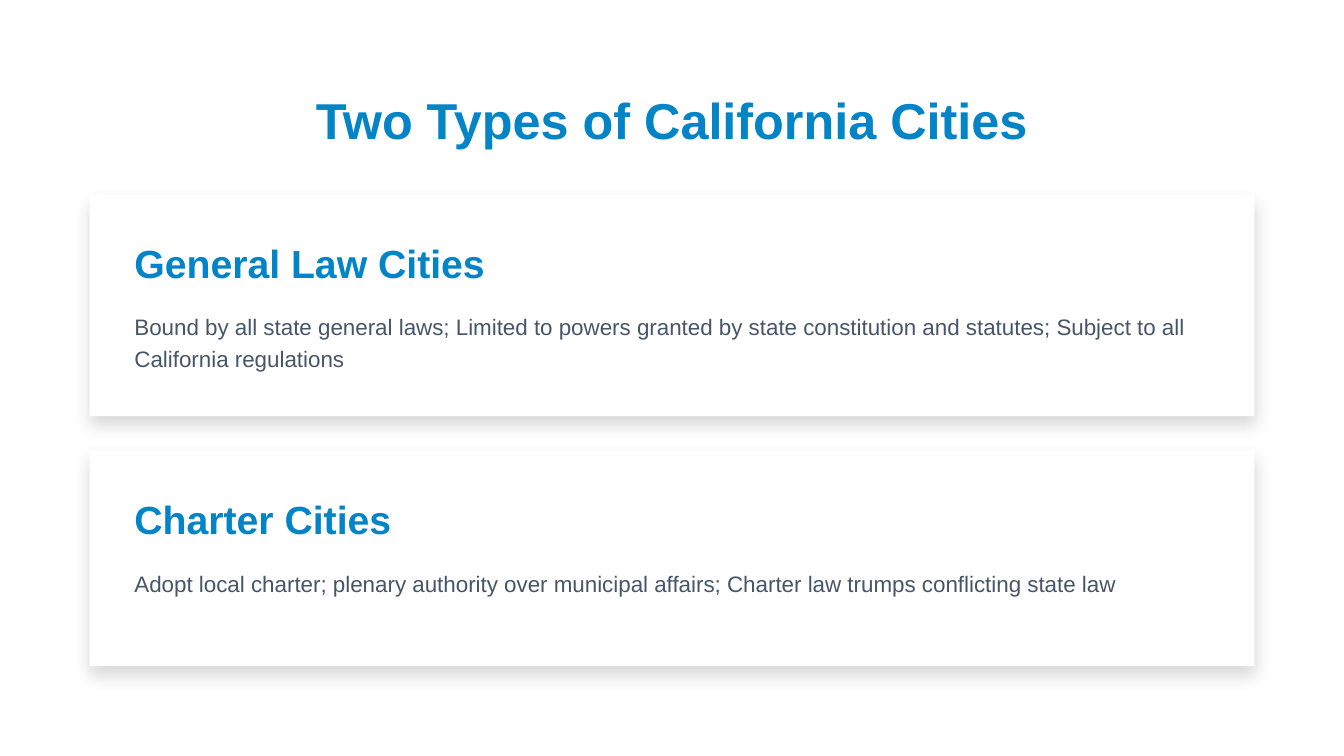
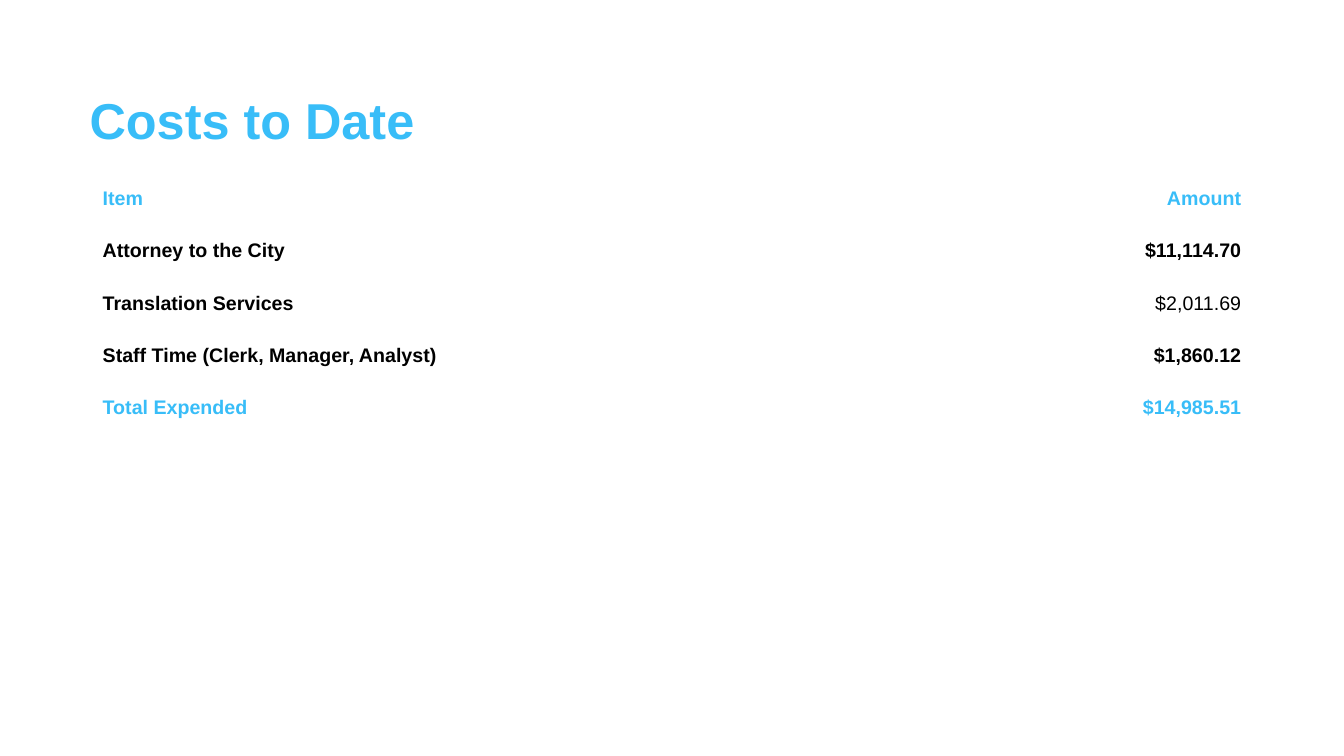
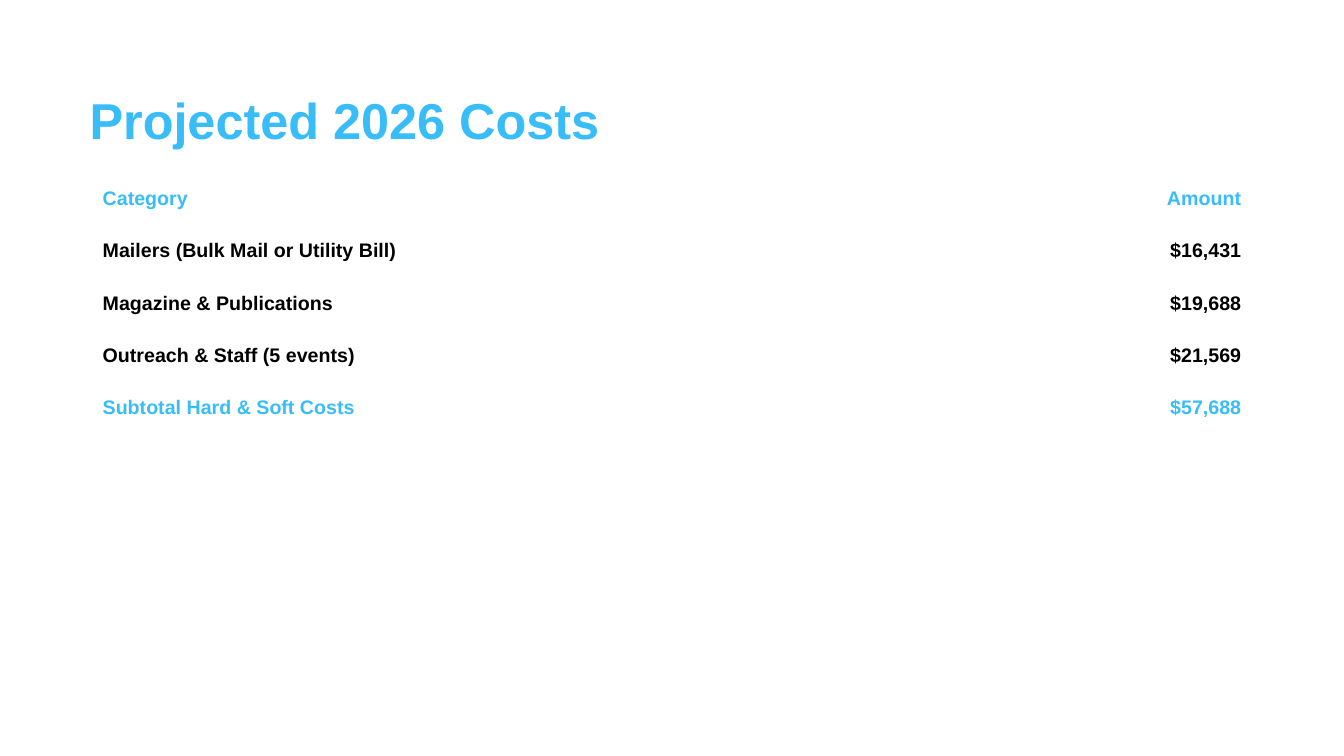
from dataclasses import dataclass

from lxml.etree import SubElement
from pptx import Presentation
from pptx.dml.color import RGBColor
from pptx.enum.shapes import MSO_SHAPE as Shape
from pptx.enum.text import MSO_ANCHOR as Anchor, MSO_AUTO_SIZE as AutoSize, PP_ALIGN as Align
from pptx.oxml.ns import qn
from pptx.util import Inches, Pt

# Shared look
WHITE = RGBColor(0xFF, 0xFF, 0xFF)
BLACK = RGBColor(0x00, 0x00, 0x00)
SLATE = RGBColor(0x47, 0x55, 0x69)
DEEP_BLUE = RGBColor(0x02, 0x84, 0xC7)
SKY_BLUE = RGBColor(0x38, 0xBD, 0xF8)
FONT = "Arial"

# Grid: fifteen columns, one of them as margin on each side
SLIDE_WIDTH, SLIDE_HEIGHT = Inches(13.33), Inches(7.5)
COLUMN = SLIDE_WIDTH / 15
MARGIN = COLUMN
CONTENT_WIDTH = 13 * COLUMN
TITLE_HEIGHT, TITLE_WIDTH = Inches(0.6), Inches(11.79)
CARD_TOP, CARD_GAP, CARD_PADDING = Inches(1.93), Inches(0.34), COLUMN / 2
HEADING_HEIGHT, HEADING_GAP, LINE_HEIGHT = Inches(0.47), COLUMN / 4, Inches(0.31)
TABLE_TOP, ROW_HEIGHT = Inches(1.71), Inches(0.52)


@dataclass(frozen=True)
class TextStyle:
    size: float
    color: RGBColor
    bold: bool = True
    align: Align = Align.LEFT
    leading: float | None = None


@dataclass(frozen=True)
class Card:
    heading: str
    body: str
    height: float
    lines: int


@dataclass(frozen=True)
class CostRow:
    label: str
    amount: str
    color: RGBColor = BLACK
    amount_bold: bool = True


CARDS = [
    Card("General Law Cities",
         "Bound by all state general laws; Limited to powers granted by state "
         "constitution and statutes; Subject to all California regulations", 2.2, 2),
    Card("Charter Cities",
         "Adopt local charter; plenary authority over municipal affairs; "
         "Charter law trumps conflicting state law", 2.14, 1),
]
COST_PAGES = {
    "Costs to Date": [
        CostRow("Item", "Amount", SKY_BLUE),
        CostRow("Attorney to the City", "$11,114.70"),
        CostRow("Translation Services", "$2,011.69", amount_bold=False),
        CostRow("Staff Time (Clerk, Manager, Analyst)", "$1,860.12"),
        CostRow("Total Expended", "$14,985.51", SKY_BLUE),
    ],
    "Projected 2026 Costs": [
        CostRow("Category", "Amount", SKY_BLUE),
        CostRow("Mailers (Bulk Mail or Utility Bill)", "$16,431"),
        CostRow("Magazine & Publications", "$19,688"),
        CostRow("Outreach & Staff (5 events)", "$21,569"),
        CostRow("Subtotal Hard & Soft Costs", "$57,688", SKY_BLUE),
    ],
}


def set_all(target, values: dict) -> None:
    for name, value in values.items():
        setattr(target, name, value)


def write(frame, text: str, style: TextStyle) -> None:
    para = frame.paragraphs[0]
    para.alignment = style.align
    if style.leading:
        para.line_spacing = Pt(style.leading)
    span = para.add_run()
    span.text = text
    set_all(span.font, {"name": FONT, "size": Pt(style.size), "bold": style.bold})
    span.font.color.rgb = style.color


def fill_box(box, place: tuple, text: str, style: TextStyle) -> None:
    """Place a text box or placeholder and write its one paragraph."""
    set_all(box, dict(zip(("left", "top", "width", "height"), map(int, place))))
    set_all(box.text_frame, {
        "margin_left": 0, "margin_top": 0, "margin_right": 0, "margin_bottom": 0,
        "word_wrap": True, "auto_size": AutoSize.NONE, "vertical_anchor": Anchor.TOP})
    write(box.text_frame, text, style)


def add_page(deck, title: str, color: RGBColor, align: Align = Align.LEFT):
    page = deck.slides.add_slide(deck.slide_layouts.get_by_name("Title Only"))
    left = (SLIDE_WIDTH - TITLE_WIDTH) / 2 if align == Align.CENTER else MARGIN
    fill_box(page.shapes.title, (left, MARGIN, TITLE_WIDTH, TITLE_HEIGHT), title,
             TextStyle(36, color, align=align, leading=43.2))
    return page


def add_soft_shadow(panel) -> None:
    panel.shadow.inherit = False
    effects = panel._element.spPr.find(qn("a:effectLst"))
    shadow = SubElement(effects, qn("a:outerShdw"), blurRad=str(Pt(12)), dist=str(Pt(6)),
                        dir="5400000", algn="ctr", rotWithShape="0")
    tint = SubElement(shadow, qn("a:srgbClr"), val=str(BLACK))
    SubElement(tint, qn("a:alpha"), val="15000")


def add_card(page, card: Card, top: float) -> None:
    panel = page.shapes.add_shape(Shape.RECTANGLE, int(MARGIN), int(top),
                                  int(CONTENT_WIDTH), Inches(card.height))
    panel.fill.solid()
    panel.fill.fore_color.rgb = WHITE
    panel.line.fill.background()
    add_soft_shadow(panel)

    left, width = MARGIN + CARD_PADDING, CONTENT_WIDTH - 2 * CARD_PADDING
    heading_top = top + CARD_PADDING
    body_top = heading_top + HEADING_HEIGHT + HEADING_GAP
    for text, text_top, height, style in (
        (card.heading, heading_top, HEADING_HEIGHT, TextStyle(28, DEEP_BLUE, leading=33.6)),
        (card.body, body_top, card.lines * LINE_HEIGHT,
         TextStyle(16, SLATE, bold=False, leading=22.4)),
    ):
        fill_box(page.shapes.add_textbox(0, 0, 0, 0), (left, text_top, width, height),
                 text, style)


def add_cost_table(page, rows: list[CostRow]) -> None:
    table = page.shapes.add_table(len(rows), 2, int(MARGIN), TABLE_TOP, int(CONTENT_WIDTH),
                                  ROW_HEIGHT * len(rows)).table
    set_all(table, {"first_row": False, "horz_banding": False})
    for index, row in enumerate(rows):
        for cell, text, style in zip(table.rows[index].cells, (row.label, row.amount), (
                TextStyle(14, row.color),
                TextStyle(14, row.color, row.amount_bold, Align.RIGHT))):
            set_all(cell, {
                "margin_left": Inches(0.13), "margin_right": Inches(0.13),
                "margin_top": Inches(0.07), "margin_bottom": Inches(0.07),
                "vertical_anchor": Anchor.MIDDLE})
            cell.fill.background()
            write(cell.text_frame, text, style)


def main() -> None:
    deck = Presentation()
    set_all(deck, {"slide_width": SLIDE_WIDTH, "slide_height": SLIDE_HEIGHT})

    # City types, as stacked cards
    page = add_page(deck, "Two Types of California Cities", DEEP_BLUE, Align.CENTER)
    top = CARD_TOP
    for card in CARDS:
        add_card(page, card, top)
        top += Inches(card.height) + CARD_GAP

    # Cost tables
    for title, rows in COST_PAGES.items():
        add_cost_table(add_page(deck, title, SKY_BLUE), rows)

    deck.save("out.pptx")


if __name__ == "__main__":
    main()
